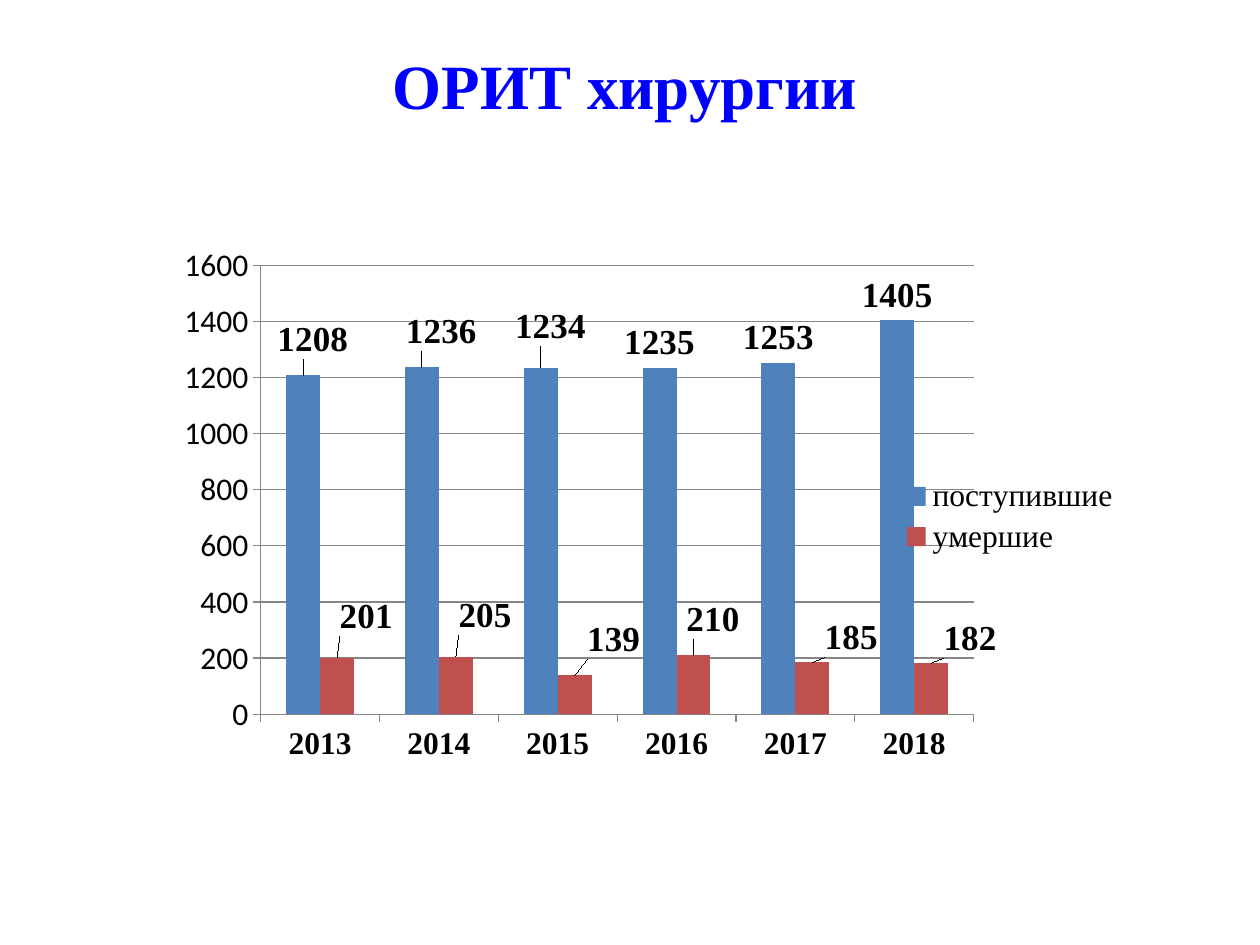
from lxml import etree
from pptx import Presentation
from pptx.chart.data import CategoryChartData
from pptx.dml.color import RGBColor
from pptx.enum.chart import XL_CHART_TYPE, XL_LABEL_POSITION, XL_LEGEND_POSITION, XL_TICK_MARK
from pptx.enum.text import MSO_ANCHOR, PP_ALIGN
from pptx.oxml.ns import qn
from pptx.util import Pt

COLUMNS = XL_CHART_TYPE.COLUMN_CLUSTERED
ABOVE_BAR = XL_LABEL_POSITION.OUTSIDE_END
RIGHT = XL_LEGEND_POSITION.RIGHT
OUTSIDE = XL_TICK_MARK.OUTSIDE
BOTTOM = MSO_ANCHOR.BOTTOM
CENTER = PP_ALIGN.CENTER

BLUE_TITLE = RGBColor(0x00, 0x00, 0xFF)
BLACK = RGBColor(0x00, 0x00, 0x00)
GRAY = RGBColor(0x86, 0x86, 0x86)
BLUE = RGBColor(0x4F, 0x81, 0xBD)
RED = RGBColor(0xC0, 0x50, 0x4D)
SERIF = "Times New Roman"
SANS = "Calibri"

YEARS = ["2013", "2014", "2015", "2016", "2017", "2018"]
# Name, colour, values, label shifts from the default place (shares of the chart)
SERIES = [
    ("поступившие", BLUE, (1208, 1236, 1234, 1235, 1253, 1405),
     [(0.01, -0.02), (0.02, -0.02), (0.01, -0.03)]),
    ("умершие", RED, (201, 205, 139, 210, 185, 182),
     [(0.03, -0.03), (0.03, -0.03), (0.04, -0.02),
      (0.02, -0.02), (0.04, 0), (0.04, 0)]),
]


def set_font(font, size, name, color=BLACK, bold=False):
    font.size, font.name, font.bold = Pt(size), name, bold
    font.color.rgb = color


def set_layout(parent, index, **values):
    """Give a chart part a manual layout, as its child number index."""
    for old in parent.findall(qn("c:layout")):
        parent.remove(old)
    layout = etree.Element(qn("c:layout"))
    manual = etree.SubElement(layout, qn("c:manualLayout"))
    for tag, value in values.items():
        etree.SubElement(manual, qn(f"c:{tag}")).set("val", str(value))
    parent.insert(index, layout)


def add_title(slide, x, y, w, h):
    tf = slide.shapes.add_textbox(Pt(x), Pt(y), Pt(w), Pt(h)).text_frame
    tf.word_wrap = True
    tf.vertical_anchor = BOTTOM
    p = tf.paragraphs[0]
    p.text = "ОРИТ хирургии"
    p.alignment = CENTER
    set_font(p.font, 36, SERIF, BLUE_TITLE, True)


def style_series(series, color, shifts):
    series.format.fill.solid()
    series.format.fill.fore_color.rgb = color
    series.invert_if_negative = False
    labels = series.data_labels
    labels.show_value = True
    labels.position = ABOVE_BAR
    set_font(labels.font, 20, SERIF, bold=True)

    # Labels moved away from their bars
    for i in range(len(shifts)):
        label = series.points[i].data_label
        set_font(label.font, 20, SERIF, bold=True)
        label.position = ABOVE_BAR
    moved = series.data_labels._element.findall(qn("c:dLbl"))
    for element, (dx, dy) in zip(moved, shifts):
        set_layout(element, 1, x=dx, y=dy)


def add_patient_chart(slide, x, y, w, h):
    data = CategoryChartData()
    data.categories = YEARS
    for name, _, values, _ in SERIES:
        data.add_series(name, values)
    chart = slide.shapes.add_chart(COLUMNS, Pt(x), Pt(y), Pt(w), Pt(h), data).chart
    chart.has_title = False
    set_font(chart.font, 18, SANS)

    # Bars
    plot = chart.plots[0]
    plot.gap_width, plot.overlap = 150, 0
    plot.vary_by_categories = False
    for series, (_, color, _, shifts) in zip(plot.series, SERIES):
        style_series(series, color, shifts)

    # Axes
    years, counts = chart.category_axis, chart.value_axis
    for axis in (years, counts):
        axis.major_tick_mark = OUTSIDE
        axis.format.line.color.rgb = GRAY
    set_font(years.tick_labels.font, 18, SERIF, bold=True)
    set_font(counts.tick_labels.font, 18, SANS)
    counts.minimum_scale, counts.maximum_scale, counts.major_unit = 0, 1600, 200
    counts.has_major_gridlines = True
    counts.major_gridlines.format.line.color.rgb = GRAY

    # Legend, partly over the last bars
    chart.has_legend = True
    legend = chart.legend
    legend.position = RIGHT
    legend.include_in_layout = False
    set_font(legend.font, 18, SERIF)
    set_layout(legend._element, 1, xMode="edge", yMode="edge",
               x=0.76, y=0.42, w=0.23, h=0.16)

    plot_area = chart._chartSpace.find(".//" + qn("c:plotArea"))
    set_layout(plot_area, 0, layoutTarget="inner", xMode="edge", yMode="edge",
               x=0.106, y=0.036, w=0.732, h=0.829)


def main():
    prs = Presentation()
    prs.slide_width, prs.slide_height = Pt(720), Pt(540)
    slide = prs.slides.add_slide(prs.slide_layouts[6])
    add_title(slide, 180, 21.6, 354.24, 51.84)
    add_patient_chart(slide, 90, 140.4, 556.56, 309.6)
    prs.save("out.pptx")


if __name__ == "__main__":
    main()
